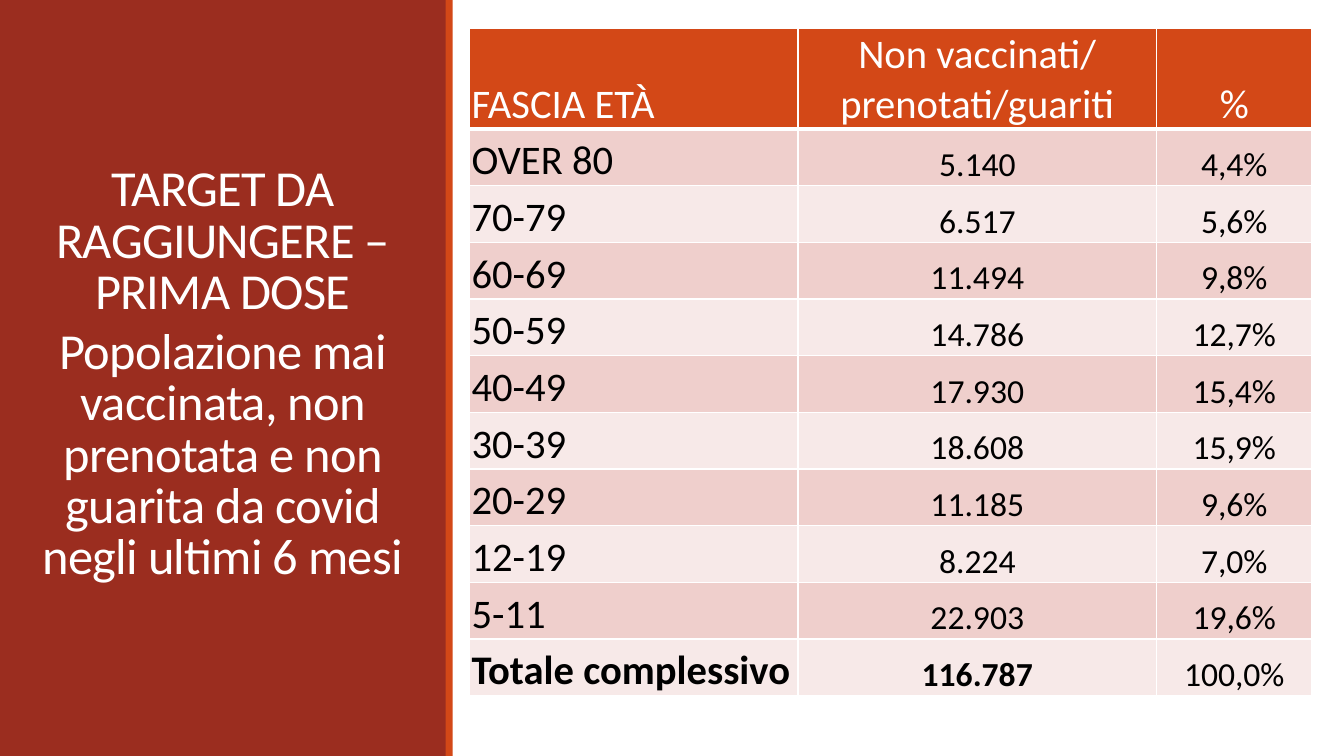
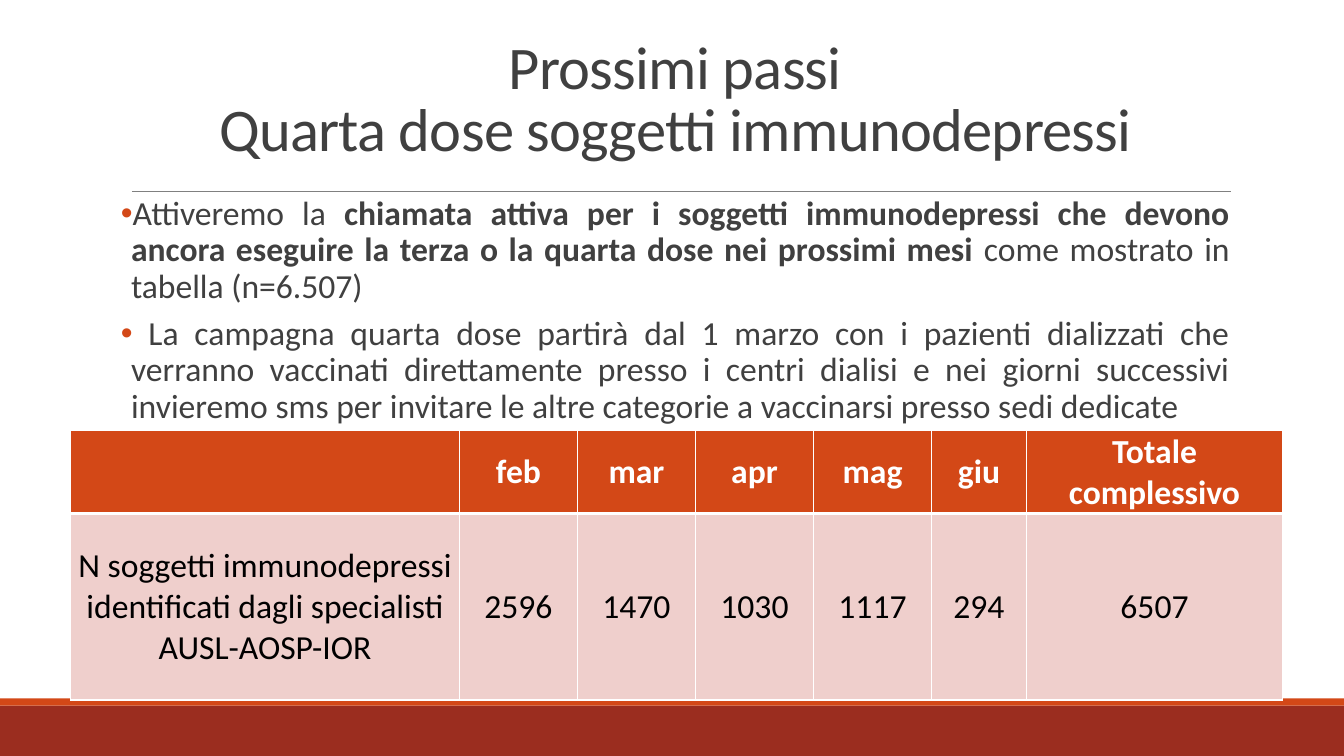
import lxml.etree
import pptx
import pptx.dml.color
import pptx.enum.shapes
import pptx.enum.text
import pptx.oxml.ns
import pptx.util

RGBColor = pptx.dml.color.RGBColor
BRICK = RGBColor(0x9B, 0x2D, 0x1F)
ORANGE = RGBColor(0xD3, 0x48, 0x17)
WHITE = RGBColor(0xFF, 0xFF, 0xFF)
BLACK = RGBColor(0x00, 0x00, 0x00)
CHARCOAL = RGBColor(0x40, 0x40, 0x40)
GREY = RGBColor(0x80, 0x80, 0x80)
ROSE = RGBColor(0xEF, 0xCF, 0xCC)
PALE_ROSE = RGBColor(0xF7, 0xE9, 0xE8)
FONT = "Calibri"
COLUMNS, ROWS = 32, 18
ALIGN = pptx.enum.text.PP_ALIGN
ANCHOR = pptx.enum.text.MSO_ANCHOR
qn = pptx.oxml.ns.qn

deck = pptx.Presentation()
deck.slide_width = pptx.util.Inches(13.33)
deck.slide_height = pptx.util.Inches(7.5)
COLUMN = deck.slide_width / COLUMNS
ROW = deck.slide_height / ROWS


def place(columns, rows, width, height):
    return [round(columns * COLUMN), round(rows * ROW), round(width * COLUMN), round(height * ROW)]


def add_filled_table(page, texts, left, top, widths, heights, anchor, label_size, header_bold):
    area = place(left, top, sum(widths), sum(heights))
    table = page.shapes.add_table(len(heights), len(widths), *area).table
    for column, width in zip(table.columns, widths):
        column.width = round(width * COLUMN)
    for row, height in zip(table.rows, heights):
        row.height = round(height * ROW)
    for r, row_texts in enumerate(texts):
        for c, text in enumerate(row_texts):
            cell = table.cell(r, c)
            cell.text = text
            cell.vertical_anchor = anchor
            cell.margin_left = cell.margin_right = cell.margin_top = pptx.util.Inches(0.01)
            cell.margin_bottom = 0
            borders = {"lnL": 1, "lnR": 1, "lnT": 3 if r == 1 else 1, "lnB": 3 if r == 0 else 1}
            for side, points in borders.items():
                line = lxml.etree.SubElement(
                    cell._tc.get_or_add_tcPr(), qn("a:" + side), w=str(pptx.util.Pt(points)))
                fill = lxml.etree.SubElement(line, qn("a:solidFill"))
                lxml.etree.SubElement(fill, qn("a:srgbClr"), val=str(WHITE))
            cell.fill.solid()
            cell.fill.fore_color.rgb = ORANGE if r == 0 else (ROSE if r % 2 else PALE_ROSE)
            for para in cell.text_frame.paragraphs:
                para.alignment = ALIGN.CENTER
                para.font.name = FONT
                for span in para.runs:
                    span.font.name = FONT
                    span.font.size = pptx.util.Pt(label_size if r == 0 or c == 0 else 24)
                    span.font.bold = header_bold and r == 0
                    span.font.color.rgb = WHITE if r == 0 else BLACK
    return table


target_page = deck.slides.add_slide(deck.slide_layouts[5])
steps_page = deck.slides.add_slide(deck.slide_layouts[1])

boxes = [
    (target_page, WHITE, (0, 0, COLUMNS, ROWS)),
    (target_page, BRICK, (0, 0, 10.63, ROWS)),
    (target_page, ORANGE, (10.61, 0, 0.17, ROWS)),
    (steps_page, BRICK, (0, 16.8, COLUMNS, 1.2)),
    (steps_page, ORANGE, (0, 16.63, COLUMNS, 0.17)),
]
bands = []
for page, colour, area in boxes:
    box = page.shapes.add_shape(pptx.enum.shapes.MSO_SHAPE.RECTANGLE, *place(*area))
    box.shadow.inherit = False
    box.fill.solid()
    box.fill.fore_color.rgb = colour
    box.line.fill.background()
    if page is steps_page:
        bands.append(box)

x, y, width, height = place(3.14, 4.56, 26.16, 0)
rule = steps_page.shapes.add_connector(
    pptx.enum.shapes.MSO_CONNECTOR.STRAIGHT, x, y, x + width, y)
rule.line.color.rgb = GREY
rule.line.width = pptx.util.Pt(0.5)
lxml.etree.SubElement(rule.element.spPr, qn("a:effectLst"))

shared = [(band, deck.slide_master) for band in bands] + [(rule, steps_page.slide_layout)]
for number, (shape, parent) in enumerate(shared):
    shape.element.xpath(".//p:cNvPr")[0].set("id", str(100 + number))
    parent.shapes.element.insert(2 + number % len(bands), shape.element)

titles = [
    (target_page, "TARGET DA RAGGIUNGERE – PRIMA DOSE\nPopolazione mai vaccinata, non prenotata "
     "e non guarita da covid negli ultimi 6 mesi",
     (0.72, 1.37, 9.17, 15.14), ANCHOR.MIDDLE, 36, WHITE, 6),
    (steps_page, "Prossimi passi\vQuarta dose soggetti immunodepressi",
     (2.88, 1.37, 26.4, 2.64), ANCHOR.BOTTOM, 43.2, CHARCOAL, 0),
]
for page, text, area, anchor, size, colour, space_after in titles:
    title = page.shapes.title
    title.left, title.top, title.width, title.height = place(*area)
    page.shapes.element.append(title.element)
    frame = title.text_frame
    frame.text = text
    frame.auto_size = pptx.enum.text.MSO_AUTO_SIZE.NONE
    frame.vertical_anchor = anchor
    for para in frame.paragraphs:
        para.alignment = ALIGN.CENTER
        para.line_spacing = 0.85
        para.space_before = pptx.util.Pt(0)
        para.space_after = pptx.util.Pt(space_after)
        for span in para.runs:
            span.font.name = FONT
            span.font.size = pptx.util.Pt(size)
            span.font.color.rgb = colour
            span.font._element.set("spc", "-50")

age_rows = [
    ("FASCIA ETÀ", "Non vaccinati/\nprenotati/guariti", "%"),
    ("OVER 80", "5.140", "4,4%"),
    ("70-79", "6.517", "5,6%"),
    ("60-69", "11.494", "9,8%"),
    ("50-59", "14.786", "12,7%"),
    ("40-49", "17.930", "15,4%"),
    ("30-39", "18.608", "15,9%"),
    ("20-29", "11.185", "9,6%"),
    ("12-19", "8.224", "7,0%"),
    ("5-11", "22.903", "19,6%"),
    ("Totale complessivo", "116.787", "100,0%"),
]
age_table = add_filled_table(
    target_page, age_rows, 11.18, 0.67, [7.82, 8.54, 3.7], [2.4] + [1.35] * 10,
    ANCHOR.BOTTOM, 29, False)
for r in range(len(age_rows)):
    label = age_table.cell(r, 0)
    label.margin_left = pptx.util.Inches(0.02)
    label.text_frame.paragraphs[0].alignment = ALIGN.LEFT
for c in range(2):
    age_table.cell(len(age_rows) - 1, c).text_frame.paragraphs[0].runs[0].font.bold = True

body = steps_page.placeholders[1]
body.left, body.top, body.width, body.height = place(2.88, 4.56, 26.4, 10.56)
frame = body.text_frame
frame.auto_size = pptx.enum.text.MSO_AUTO_SIZE.NONE
frame.margin_left = frame.margin_right = 0
points = [
    [("Attiveremo la ", False),
     ("chiamata attiva per i soggetti immunodepressi che devono ancora eseguire la terza "
      "o la quarta dose nei prossimi mesi", True),
     (" come mostrato in tabella (n=6.507)", False)],
    [(" La campagna quarta dose partirà dal 1 marzo con i pazienti dializzati che verranno "
      "vaccinati direttamente presso i centri dialisi e nei giorni successivi invieremo sms "
      "per invitare le altre categorie a vaccinarsi presso sedi dedicate", False)],
]
for number, pieces in enumerate(points):
    para = frame.add_paragraph() if number else frame.paragraphs[0]
    para.alignment = ALIGN.JUSTIFY
    para.line_spacing = 0.9
    para.space_before = pptx.util.Pt(6)
    para.space_after = pptx.util.Pt(2)
    properties = para._p.get_or_add_pPr()
    indent = pptx.util.Inches(0.1)
    properties.set("marL", str(indent))
    properties.set("indent", str(-indent))
    bullet_colour = lxml.etree.SubElement(properties, qn("a:buClr"))
    lxml.etree.SubElement(bullet_colour, qn("a:srgbClr"), val=str(ORANGE))
    lxml.etree.SubElement(properties, qn("a:buChar"), char="•")
    for text, bold in pieces:
        span = para.add_run()
        span.text = text
        span.font.name = FONT
        span.font.size = pptx.util.Pt(24)
        span.font.bold = bold
        span.font.color.rgb = CHARCOAL

month_rows = [
    ("", "feb", "mar", "apr", "mag", "giu", "Totale complessivo"),
    ("N soggetti immunodepressi identificati dagli specialisti AUSL-AOSP-IOR",
     "2596", "1470", "1030", "1117", "294", "6507"),
]
add_filled_table(
    steps_page, month_rows, 1.68, 10.25, [9.26] + [2.81] * 4 + [2.26, 6.1], [1.94, 4.44],
    ANCHOR.MIDDLE, 24, True)

deck.save("out.pptx")
